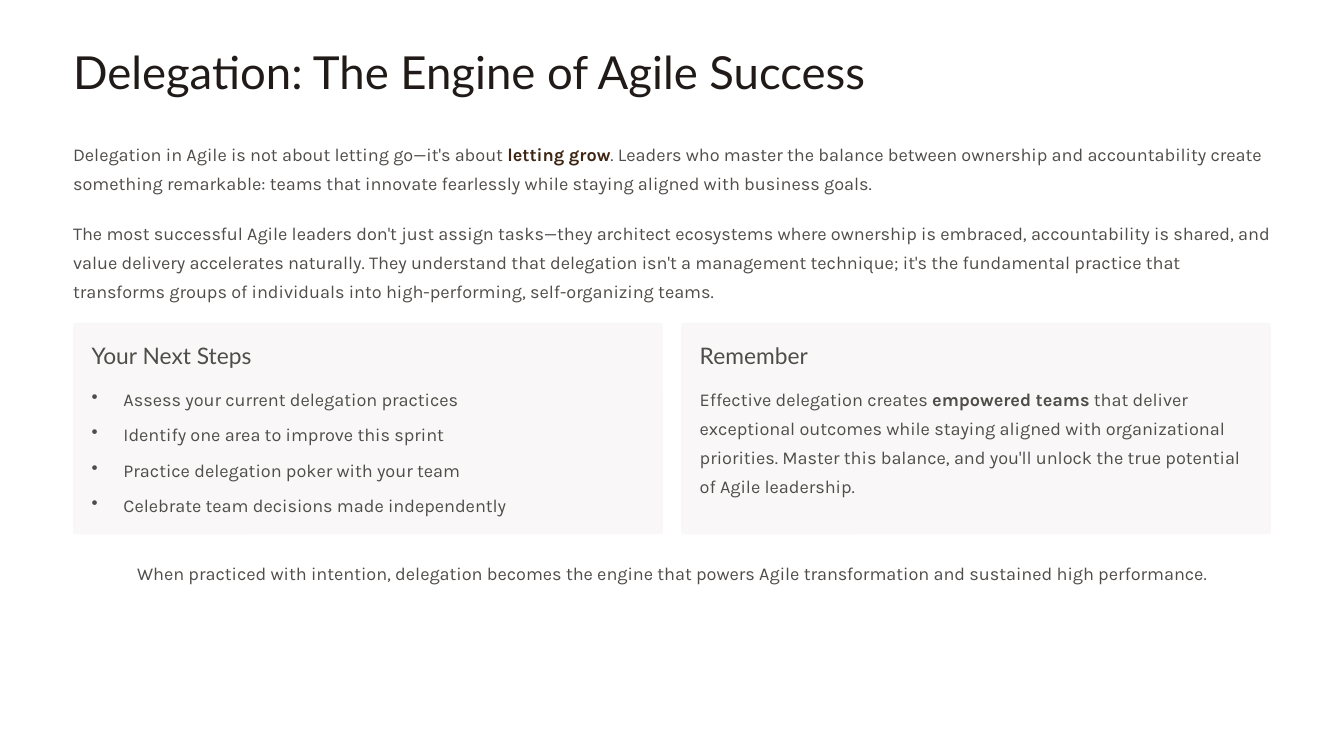
from dataclasses import dataclass

from lxml import etree
from pptx import Presentation
from pptx import util as u
from pptx.dml.color import RGBColor
from pptx.enum import shapes, text
from pptx.oxml.ns import qn

EMU_PER_PX = 9144  # 100 px to the inch


@dataclass(frozen=True)
class TextStyle:
    font: str
    size: float
    leading: float
    color: str


@dataclass(frozen=True)
class Theme:
    background: str = "FFFFFF"
    card: str = "F9F7F7"
    body_color: str = "504C49"
    accent: str = "3E2513"
    title: TextStyle = TextStyle("Lato", 39, 48.5, "201B18")
    heading: TextStyle = TextStyle("Lato", 19.5, 24, "504C49")
    body: TextStyle = TextStyle("Karla", 15.5, 25, "504C49")
    bullet_gap: float = 5.5


THEME = Theme()

# Page grid, in px
PAGE_WIDTH, PAGE_HEIGHT = 1600, 900
MARGIN = 87
CONTENT_WIDTH = PAGE_WIDTH - 2 * MARGIN
CARD_TOP, CARD_HEIGHT, CARD_GAP, CARD_PADDING = 384, 252, 22, 22
CARD_WIDTH = (CONTENT_WIDTH - CARD_GAP) // 2
BULLET_INDENT = 38


def px(length):
    return u.Emu(length * EMU_PER_PX)


def format_paragraph(para, style):
    para.line_spacing = u.Pt(style.leading)
    for span in para.runs:
        span.font.name = style.font
        span.font.size = u.Pt(style.size)
        span.font.color.rgb = RGBColor.from_string(style.color)


def add_text(page, left, top, width, height, content, style):
    """Add a text box without insets; each line of content is a paragraph."""
    box = page.shapes.add_textbox(px(left), px(top), px(width), px(height))
    frame = box.text_frame
    frame.margin_left = frame.margin_right = 0
    frame.margin_top = frame.margin_bottom = 0
    frame.word_wrap = True
    frame.text = content
    for para in frame.paragraphs:
        format_paragraph(para, style)
    return box


def add_emphasized_text(page, left, top, width, height, pieces, emphasis_color):
    """Add body text whose middle piece is bold."""
    box = add_text(page, left, top, width, height, "", THEME.body)
    para = box.text_frame.paragraphs[0]
    for piece in pieces:
        para.add_run().text = piece
    format_paragraph(para, THEME.body)
    emphasis = para.runs[1].font
    emphasis.bold = True
    emphasis.color.rgb = RGBColor.from_string(emphasis_color)


def add_bullets(page, left, top, width, height, items):
    box = add_text(page, left, top, width, height, "\n".join(items), THEME.body)
    for index, para in enumerate(box.text_frame.paragraphs):
        para.space_before = u.Pt(THEME.bullet_gap if index else 0)
        properties = para._p.get_or_add_pPr()
        properties.set("marL", str(px(BULLET_INDENT)))
        properties.set("indent", str(-px(BULLET_INDENT)))
        etree.SubElement(properties, qn("a:buChar")).set("char", "•")


def add_card(page, column, heading):
    """Add a card with its heading and return the left edge of its text."""
    left = MARGIN + column * (CARD_WIDTH + CARD_GAP)
    card = page.shapes.add_shape(
        shapes.MSO_SHAPE.ROUNDED_RECTANGLE,
        px(left), px(CARD_TOP), px(CARD_WIDTH), px(CARD_HEIGHT))
    card.adjustments[0] = 0.01
    card.shadow.inherit = False
    card.fill.solid()
    card.fill.fore_color.rgb = RGBColor.from_string(THEME.card)
    card.line.fill.background()
    text_left = left + CARD_PADDING
    add_text(page, text_left, CARD_TOP + CARD_PADDING, 271, 34, heading, THEME.heading)
    return text_left


def main():
    deck = Presentation()
    deck.slide_width, deck.slide_height = px(PAGE_WIDTH), px(PAGE_HEIGHT)
    page = deck.slides.add_slide(deck.slide_layouts[6])
    page.background.fill.solid()
    page.background.fill.fore_color.rgb = RGBColor.from_string(THEME.background)

    # Title and introduction
    add_text(page, MARGIN, 50, CONTENT_WIDTH, 68,
             "Delegation: The Engine of Agile Success", THEME.title)
    add_emphasized_text(page, MARGIN, 162, CONTENT_WIDTH, 69, (
        "Delegation in Agile is not about letting go—it's about ",
        "letting grow",
        ". Leaders who master the balance between ownership and accountability "
        "create something remarkable: teams that innovate fearlessly while "
        "staying aligned with business goals."), THEME.accent)
    add_text(page, MARGIN, 256, CONTENT_WIDTH, 104,
             "The most successful Agile leaders don't just assign tasks—they "
             "architect ecosystems where ownership is embraced, accountability is "
             "shared, and value delivery accelerates naturally. They understand "
             "that delegation isn't a management technique; it's the fundamental "
             "practice that transforms groups of individuals into high-performing, "
             "self-organizing teams.", THEME.body)

    # Cards
    card_text_top = CARD_TOP + 69
    card_text_width = CARD_WIDTH - 2 * CARD_PADDING + 1
    steps_left = add_card(page, 0, "Your Next Steps")
    add_bullets(page, steps_left, card_text_top, card_text_width, 162, (
        "Assess your current delegation practices",
        "Identify one area to improve this sprint",
        "Practice delegation poker with your team",
        "Celebrate team decisions made independently"))
    remember_left = add_card(page, 1, "Remember")
    add_emphasized_text(page, remember_left, card_text_top, card_text_width, 139, (
        "Effective delegation creates ",
        "empowered teams",
        " that deliver exceptional outcomes while staying aligned with "
        "organizational priorities. Master this balance, and you'll unlock the "
        "true potential of Agile leadership."), THEME.body_color)

    # Closing line
    closing = add_text(page, MARGIN, 661, CONTENT_WIDTH, 35,
                       "When practiced with intention, delegation becomes the engine "
                       "that powers Agile transformation and sustained high "
                       "performance.", THEME.body)
    closing.text_frame.paragraphs[0].alignment = text.PP_ALIGN.CENTER

    deck.save("out.pptx")


if __name__ == "__main__":
    main()
